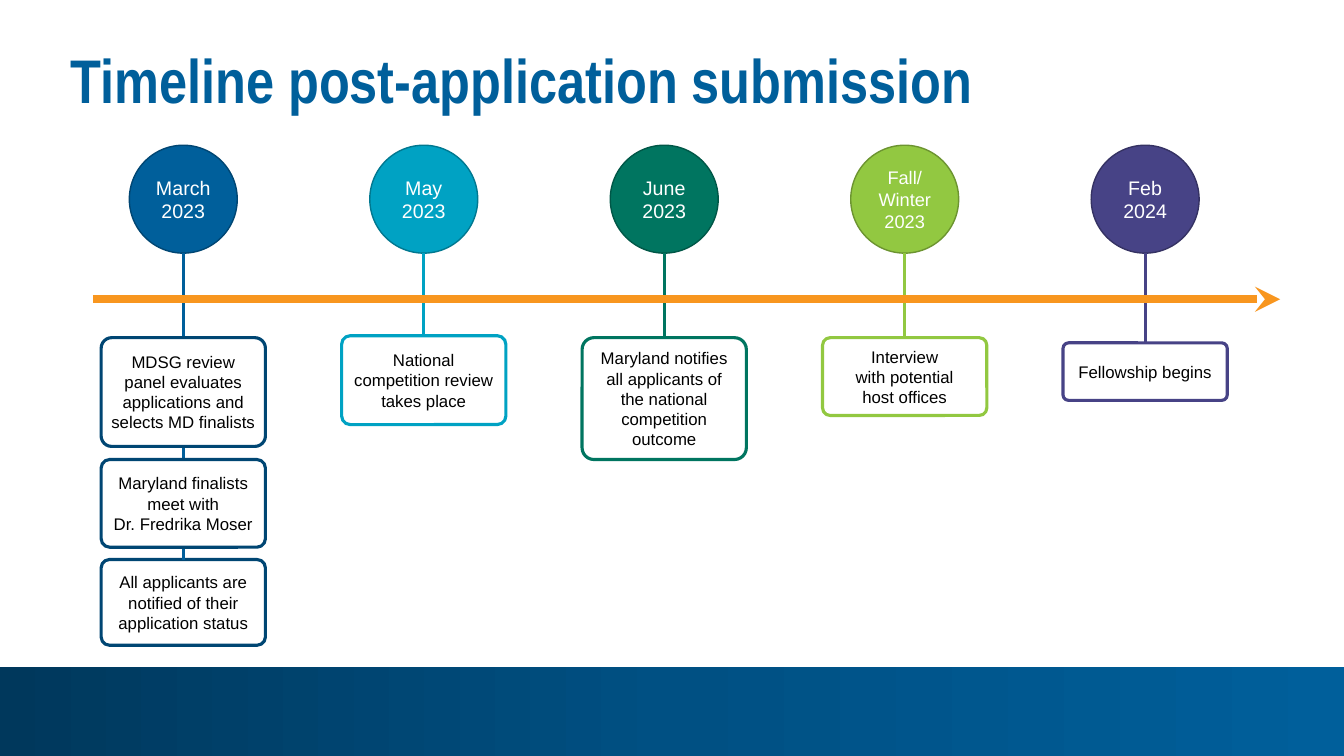
from copy import deepcopy
from dataclasses import dataclass

from lxml import etree
from pptx import Presentation
from pptx import util as u
from pptx.dml.color import RGBColor
from pptx.enum import shapes, text
from pptx.oxml.ns import qn


@dataclass(frozen=True)
class Theme:
    title: str = "005F9B"
    arrow: str = "F8961F"
    white: str = "FFFFFF"
    black: str = "000000"
    footer: tuple[str, ...] = ("00385C", "005083", "005F9B")
    title_font: str = "Arial Narrow"
    body_font: str = "Arial"
    title_size: int = 44
    date_size: int = 14
    step_size: int = 12


@dataclass(frozen=True)
class Step:
    top: float
    height: float
    label: str


@dataclass(frozen=True)
class Milestone:
    date: str
    color: str
    edge: str
    border: str
    steps: tuple[Step, ...]
    date_size: int = Theme.date_size


T = Theme()
SLIDE_W, SLIDE_H = 33.87, 19.05
FIRST_CENTER, PITCH = 4.62, 6.06
CIRCLE_TOP, CIRCLE_D = 3.66, 2.72
BOX_W, BOX_INSET = 4.14, 0.13
ARROW_LEFT, ARROW_RIGHT, ARROW_Y = 2.34, 32.26, 7.54
FOOTER_TOP = 16.81

MILESTONES = (
    Milestone("March 2023", "005F9B", "004673", "004673", (
        Step(8.51, 2.74, "MDSG review panel evaluates applications and selects MD finalists"),
        Step(11.58, 2.21, "Maryland finalists meet with\nDr. Fredrika Moser"),
        Step(14.1, 2.16, "All applicants are notified of their application status"),
    )),
    Milestone("May 2023", "00A2C3", "007890", "00A2C3", (
        Step(8.46, 2.24, "National competition review takes place"),
    )),
    Milestone("June 2023", "007560", "005747", "007560", (
        Step(8.51, 3.07, "Maryland notifies all applicants of\nthe national competition outcome"),
    )),
    Milestone("Fall/\nWinter 2023", "92C841", "6C9430", "92C841", (
        Step(8.51, 1.96, "Interview\nwith potential\nhost offices"),
    ), date_size=13),
    Milestone("Feb 2024", "474386", "353263", "474386", (
        Step(8.64, 1.45, "Fellowship begins"),
    )),
)


def rgb(color: str) -> RGBColor:
    return RGBColor.from_string(color)


def put_text(sp, content: str, *, size: int, color: str, font: str = T.body_font,
             bold: bool = False, align=text.PP_ALIGN.CENTER,
             inset: float | None = None, spacing: float | None = None) -> None:
    tf = sp.text_frame
    tf.word_wrap = True
    tf.vertical_anchor = text.MSO_ANCHOR.MIDDLE
    if inset is not None:
        tf.margin_left = tf.margin_top = tf.margin_right = tf.margin_bottom = u.Cm(inset)
    p = tf.paragraphs[0]
    p.text = content
    p.alignment = align
    if spacing is not None:
        p.line_spacing = spacing
    for r in p.runs:
        r.font.size, r.font.name, r.font.bold = u.Pt(size), font, bold
        r.font.color.rgb = rgb(color)
    for br in p._p.findall(qn("a:br")):
        br.append(deepcopy(p.runs[0]._r.rPr))


def add_outlined(s, kind, left: float, top: float, width: float, height: float,
                 fill: str, line: str, line_width: float):
    sp = s.shapes.add_shape(kind, u.Cm(left), u.Cm(top), u.Cm(width), u.Cm(height))
    sp.shadow.inherit = False
    sp.fill.solid()
    sp.fill.fore_color.rgb = rgb(fill)
    sp.line.color.rgb = rgb(line)
    sp.line.width = u.Pt(line_width)
    return sp


def add_line(s, x1: float, y1: float, x2: float, y2: float, color: str, width: float):
    cxn = s.shapes.add_connector(shapes.MSO_CONNECTOR.STRAIGHT,
                                 u.Cm(x1), u.Cm(y1), u.Cm(x2), u.Cm(y2))
    cxn.line.color.rgb = rgb(color)
    cxn.line.width = u.Pt(width)
    etree.SubElement(cxn._element.spPr, qn("a:effectLst"))
    return cxn


def add_step(s, center: float, step: Step, border: str):
    box = add_outlined(s, shapes.MSO_SHAPE.ROUNDED_RECTANGLE, center - BOX_W / 2, step.top,
                       BOX_W, step.height, T.white, border, 2.25)
    box.adjustments[0] = 0.097
    put_text(box, step.label, size=T.step_size, color=T.black, inset=BOX_INSET)
    return box


def add_milestone(s, center: float, m: Milestone) -> None:
    """Draw the stem to the last step, with the earlier steps on top of it."""
    circle = add_outlined(s, shapes.MSO_SHAPE.OVAL, center - CIRCLE_D / 2, CIRCLE_TOP,
                          CIRCLE_D, CIRCLE_D, m.color, m.edge, 1)
    put_text(circle, m.date, size=m.date_size, color=T.white)
    *earlier, last = m.steps
    box = add_step(s, center, last, m.border)
    stem = add_line(s, center, CIRCLE_TOP + CIRCLE_D, center, last.top, m.color, 2.25)
    stem.end_connect(box, 0)
    for step in reversed(earlier):
        add_step(s, center, step, m.border)


def add_footer(s) -> None:
    sp = s.shapes.add_shape(shapes.MSO_SHAPE.RECTANGLE, 0, u.Cm(FOOTER_TOP),
                            u.Cm(SLIDE_W), u.Cm(SLIDE_H - FOOTER_TOP))
    sp.shadow.inherit = False
    sp.line.fill.background()
    sp.fill.gradient()
    sp.fill.gradient_angle = 0
    stops = sp._element.spPr.find(qn("a:gradFill")).find(qn("a:gsLst"))
    stops.insert(1, deepcopy(stops[0]))
    for i, (stop, color) in enumerate(zip(sp.fill.gradient_stops, T.footer)):
        stop.position = i / (len(T.footer) - 1)
        stop.color.rgb = rgb(color)


def add_title(s) -> None:
    sp = s.shapes.add_textbox(u.Cm(1.52), u.Cm(1.02), u.Cm(30.73), u.Cm(2.16))
    put_text(sp, "Timeline post-application submission", size=T.title_size, color=T.title,
             font=T.title_font, bold=True, align=text.PP_ALIGN.LEFT, spacing=0.9)


def add_time_arrow(s) -> None:
    cxn = add_line(s, ARROW_LEFT, ARROW_Y, ARROW_RIGHT, ARROW_Y, T.arrow, 6)
    ln = cxn._element.spPr.find(qn("a:ln"))
    etree.SubElement(ln, qn("a:tailEnd"), type="stealth")


def main() -> None:
    prs = Presentation()
    prs.slide_width, prs.slide_height = u.Cm(SLIDE_W), u.Cm(SLIDE_H)
    s = prs.slides.add_slide(prs.slide_layouts[6])
    add_footer(s)
    add_title(s)
    for i, milestone in enumerate(MILESTONES):
        add_milestone(s, FIRST_CENTER + i * PITCH, milestone)
    add_time_arrow(s)
    prs.save("out.pptx")


if __name__ == "__main__":
    main()
